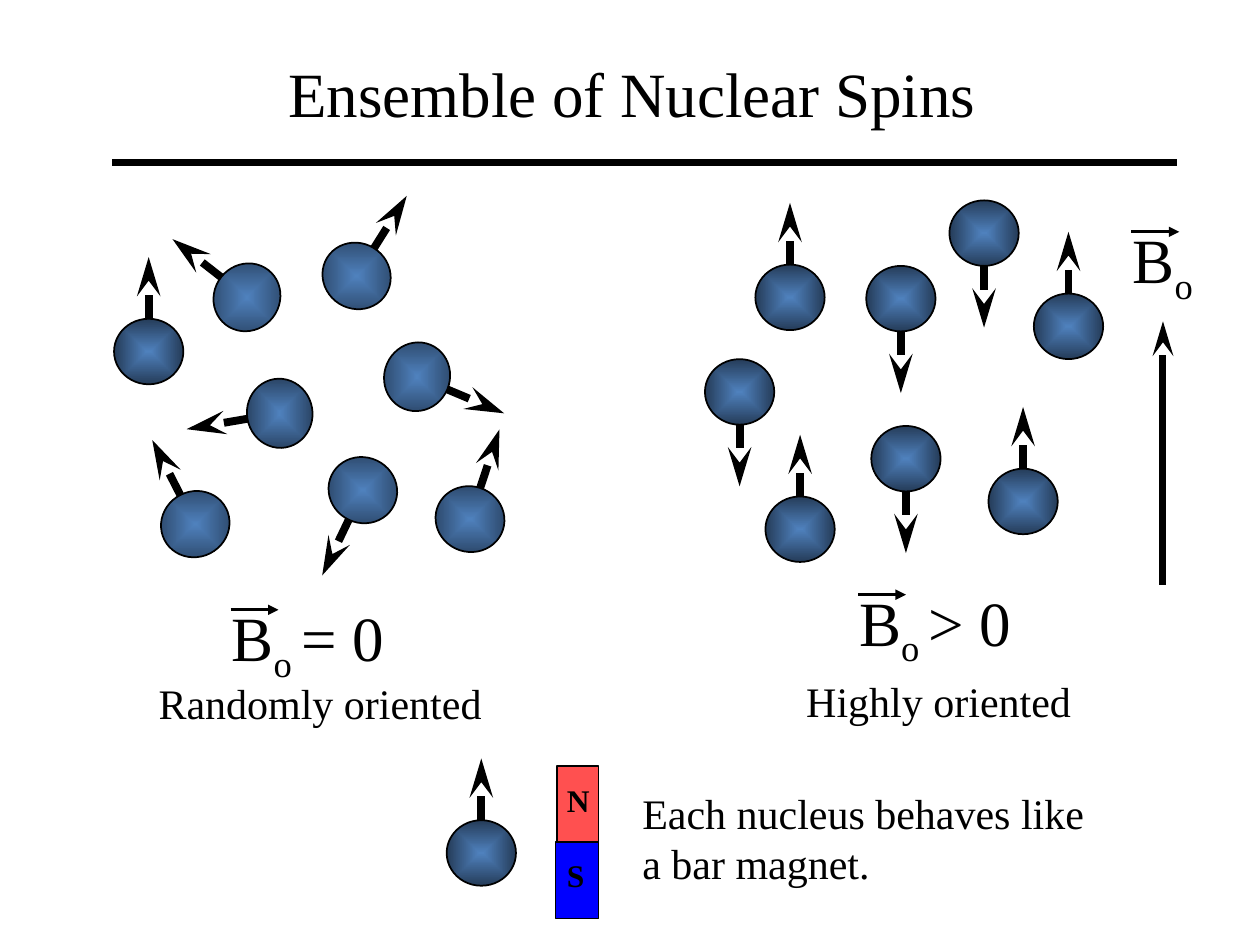
from dataclasses import dataclass
from math import cos, radians, sin

from lxml import etree
from pptx import Presentation
from pptx.dml.color import RGBColor
from pptx.enum.shapes import MSO_CONNECTOR, MSO_SHAPE
from pptx.enum.text import MSO_AUTO_SIZE
from pptx.oxml import parse_xml
from pptx.oxml.ns import nsdecls, qn
from pptx.util import Inches, Pt

STRAIGHT = MSO_CONNECTOR.STRAIGHT
OVAL, RECTANGLE = MSO_SHAPE.OVAL, MSO_SHAPE.RECTANGLE
FIT_SHAPE = MSO_AUTO_SIZE.SHAPE_TO_FIT_TEXT


@dataclass(frozen=True)
class Theme:
    font: str = "Times New Roman"
    ink: RGBColor = RGBColor(0x00, 0x00, 0x00)
    core: RGBColor = RGBColor(0x4F, 0x81, 0xBD)
    rim: RGBColor = RGBColor(0x25, 0x3C, 0x59)
    north: RGBColor = RGBColor(0xFF, 0x50, 0x50)
    south: RGBColor = RGBColor(0x00, 0x00, 0xFF)
    heading: int = 36
    body: int = 24
    pole: int = 18
    thick: float = 4.5
    field: float = 4
    vector: float = 1.5
    outline: float = 1


THEME = Theme()

# Spins: centre within the panel, then clockwise angle from straight up
RANDOM_SPINS = [
    (0.28, 1.24, 0), (1.32, 1.73, 260.3), (1.06, 0.81, 308), (2.83, 2.57, 18.2),
    (1.98, 2.34, 205.5), (0.65, 2.61, 332.9), (2.41, 1.44, 112.8), (1.93, 0.64, 32.1),
]
ORIENTED_SPINS = [
    (1.55, 0.82, 180), (1.59, 2.09, 180), (0.27, 1.56, 180), (0.67, 0.81, 0),
    (2.52, 2.43, 0), (2.88, 1.04, 0), (2.21, 0.3, 180), (0.75, 2.65, 0),
]


def add_line(shapes, start, end, weight, head=None, head_length="med"):
    line = shapes.add_connector(STRAIGHT, *map(Inches, (*start, *end)))
    line.line.color.rgb = THEME.ink
    line.line.width = Pt(weight)
    if head:
        etree.SubElement(line.line._get_or_add_ln(), qn("a:tailEnd"),
                         type=head, len=head_length)
    etree.SubElement(line._element.spPr, qn("a:effectLst"))


def add_outlined(shapes, kind, left, top, width, height):
    shape = shapes.add_shape(kind, *map(Inches, (left, top, width, height)))
    shape.shadow.inherit = False
    shape.line.color.rgb = THEME.ink
    shape.line.width = Pt(THEME.outline)
    return shape


def add_text(slide, box, paragraphs, size, bold=False, wrap=False, gap=0):
    """Each paragraph is a list of (words, is_subscript) runs."""
    frame = slide.shapes.add_textbox(*map(Inches, box)).text_frame
    frame.word_wrap = wrap
    frame.auto_size = FIT_SHAPE
    for index, runs in enumerate(paragraphs):
        paragraph = frame.add_paragraph() if index else frame.paragraphs[0]
        if index and gap:
            paragraph.space_before = Pt(gap)
        for words, subscript in runs:
            run = paragraph.add_run()
            run.text = words
            run.font.name = THEME.font
            run.font.size = Pt(size)
            run.font.bold = bold
            run.font.color.rgb = THEME.ink
            if subscript:
                run._r.get_or_add_rPr().set("baseline", "-25000")


def add_spin(slide, x, y, angle):
    """A nucleus centred on (x, y) with its arrow pointing along angle."""
    group = slide.shapes.add_group_shape().shapes
    dx, dy = sin(radians(angle)), -cos(radians(angle))
    add_line(group, (x - 0.24 * dx, y - 0.24 * dy),
             (x + 0.75 * dx, y + 0.75 * dy), THEME.thick, "stealth", "lg")

    width, height = 0.55, 0.52
    nucleus = add_outlined(group, OVAL, x - width / 2, y - height / 2, width, height)
    nucleus.rotation = angle
    nucleus.fill.gradient()
    for stop, color in zip(nucleus.fill.gradient_stops, (THEME.core, THEME.rim)):
        stop.color.rgb = color
    # Radiate from the centre instead of along a line
    linear = nucleus._element.spPr.find(qn("a:gradFill")).find(qn("a:lin"))
    linear.getparent().replace(linear, parse_xml(
        f'<a:path {nsdecls("a")} path="shape">'
        '<a:fillToRect l="50000" t="50000" r="50000" b="50000"/></a:path>'))


def add_field_label(slide, left, top, width, relation=""):
    """B with subscript o, a vector arrow above it and an optional relation."""
    runs = [("o ", True), (relation, False)] if relation else [("o", True)]
    add_text(slide, (left, top, width, 0.7), [[("B", False), *runs]], THEME.heading)
    add_line(slide.shapes, (left + 0.09, top + 0.14), (left + 0.47, top + 0.14),
             THEME.vector, "triangle")


def add_header(slide, left, top):
    add_text(slide, (left + 1.3, top, 5.66, 0.7),
             [[("Ensemble of Nuclear Spins", False)]], THEME.heading)
    add_line(slide.shapes, (left, top + 0.91), (left + 8.45, top + 0.91), THEME.thick)


def add_ensemble(slide, left, top, spins, relation, label_at, caption, caption_box):
    for x, y, angle in spins:
        add_spin(slide, left + x, top + y, angle)
    add_field_label(slide, left + label_at[0], top + label_at[1], 1.44, relation)
    x, y, width = caption_box
    add_text(slide, (left + x, top + y, width, 0.5), [[(caption, False)]], THEME.body)


def add_field(slide, left, top):
    add_field_label(slide, left, top, 0.7)
    add_line(slide.shapes, (left + 0.34, top + 2.94), (left + 0.34, top + 0.85),
             THEME.field, "stealth", "lg")


def add_magnet_analogy(slide, left, top):
    add_spin(slide, left + 0.28, top + 0.75, 0)
    # Bar magnet
    poles = [((0.88, 0.06, 0.33, 0.64), THEME.north),
             ((0.87, 0.66, 0.34, 0.61), THEME.south)]
    for (x, y, width, height), color in poles:
        pole = add_outlined(slide.shapes, RECTANGLE, left + x, top + y, width, height)
        pole.fill.solid()
        pole.fill.fore_color.rgb = color
    add_text(slide, (left + 0.86, top + 0.13, 0.44, 1),
             [[("N", False)], [("S", False)]], THEME.pole,
             bold=True, wrap=True, gap=21)
    # Explanation
    add_text(slide, (left + 1.46, top + 0.18, 3.8, 0.9),
             [[("Each nucleus behaves like", False)], [("a bar magnet.", False)]],
             THEME.body)


def main():
    deck = Presentation()
    deck.slide_width, deck.slide_height = Inches(10), Inches(7.5)
    slide = deck.slides.add_slide(deck.slide_layouts[6])

    add_header(slide, 0.89, 0.38)
    add_ensemble(slide, 0.9, 1.55, RANDOM_SPINS, "= 0", (0.84, 3.15),
                 "Randomly oriented", (0.26, 3.78, 2.85))
    add_ensemble(slide, 5.6, 1.55, ORIENTED_SPINS, "> 0", (1.12, 3.03),
                 "Highly oriented", (0.7, 3.76, 2.35))
    add_field(slide, 8.89, 1.7)
    add_magnet_analogy(slide, 3.54, 6.02)

    deck.save("out.pptx")


if __name__ == "__main__":
    main()
